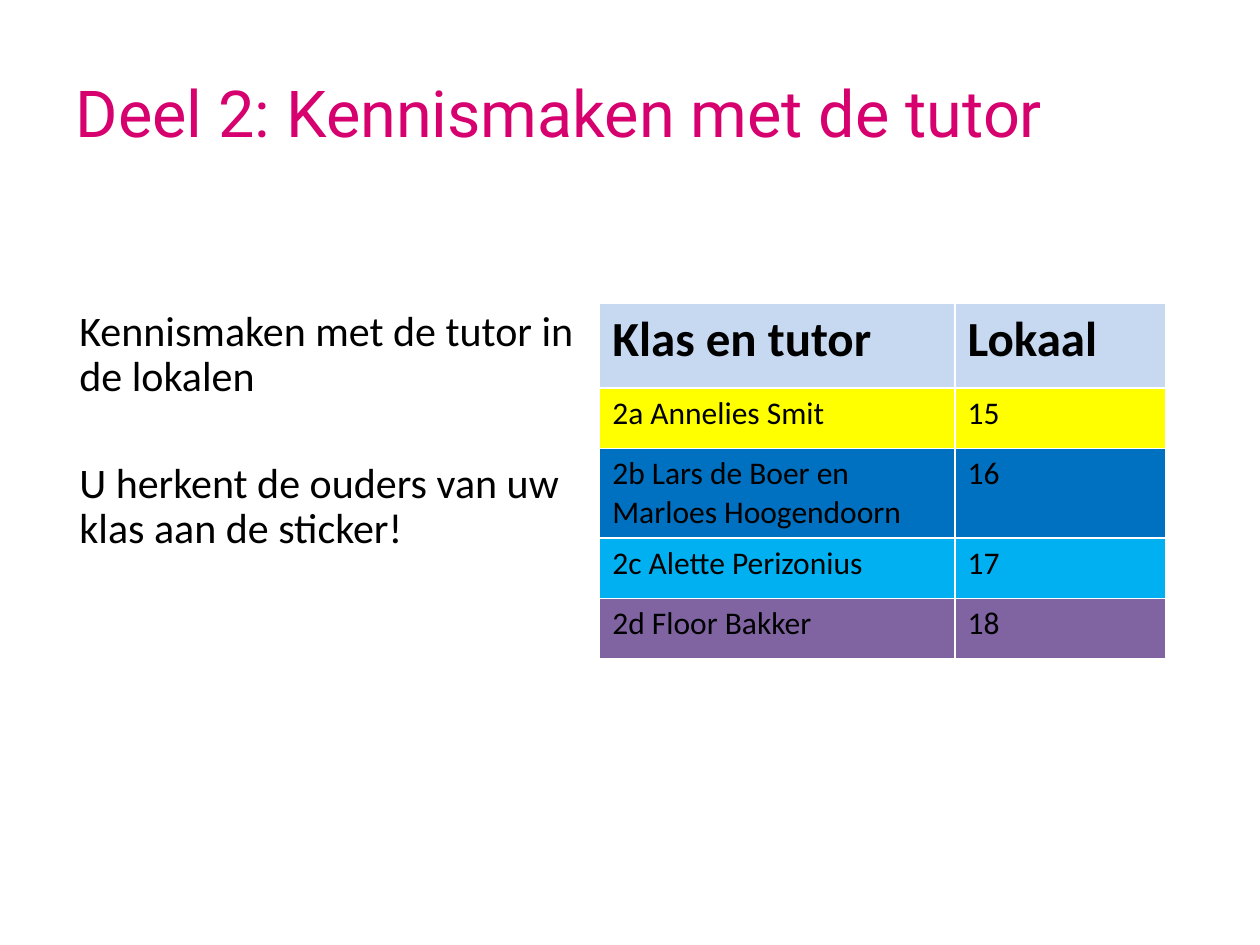
from pptx import Presentation
from pptx.dml.color import RGBColor
from pptx.enum.text import MSO_ANCHOR, MSO_AUTO_SIZE, PP_ALIGN
from pptx.oxml.xmlchemy import OxmlElement
from pptx.util import Inches, Pt

MIDDLE, TOP = MSO_ANCHOR.MIDDLE, MSO_ANCHOR.TOP
NO_AUTOFIT = MSO_AUTO_SIZE.NONE
LEFT = PP_ALIGN.LEFT

HEADER = ("Klas en tutor", "Lokaal")
CLASSES = [
    ("2a Annelies Smit", "15", "FFFF00"),
    ("2b Lars de Boer en Marloes Hoogendoorn", "16", "0070C0"),
    ("2c Alette Perizonius", "17", "00B0F0"),
    ("2d Floor Bakker", "18", "8064A2"),
]
INSTRUCTIONS = [
    "Kennismaken met de tutor in de lokalen",
    "U herkent de ouders van uw klas aan de sticker!",
]
COLUMN_WIDTHS = (2.82, 1.67)
ROW_HEIGHTS = (0.67, 0.48, 0.71, 0.48, 0.48)


def color(value):
    return RGBColor.from_string(value)


def write(paragraph, text, size=18, font="Calibri", ink="000000", bold=False,
          line_spacing=None, space_before=0):
    paragraph.alignment = LEFT
    paragraph.line_spacing = line_spacing
    paragraph.space_before = Pt(space_before)
    run = paragraph.add_run()
    run.text = text
    run.font.size = Pt(size)
    run.font.name = font
    run.font.bold = bold
    run.font.color.rgb = color(ink)


def place(placeholder, left, top, width, height, anchor):
    placeholder.left, placeholder.top = Inches(left), Inches(top)
    placeholder.width, placeholder.height = Inches(width), Inches(height)
    frame = placeholder.text_frame
    frame.word_wrap = True
    frame.auto_size = NO_AUTOFIT
    frame.vertical_anchor = anchor
    return frame


def remove_bullet(paragraph):
    properties = paragraph._p.get_or_add_pPr()
    properties.set("marL", "0")
    properties.set("indent", "0")
    properties.append(OxmlElement("a:buNone"))


def add_title(slide):
    frame = place(slide.shapes.title, 0.5, 0.3, 8.75, 1.25, MIDDLE)
    write(frame.paragraphs[0], "Deel 2: Kennismaken met de tutor", size=37,
          font="Roboto", ink="D6006E", line_spacing=0.9)


def add_instructions(slide):
    frame = place(slide.placeholders[1], 0.53, 2.41, 4.34, 3.57, TOP)
    for index, instruction in enumerate(INSTRUCTIONS):
        paragraph = frame.add_paragraph() if index else frame.paragraphs[0]
        remove_bullet(paragraph)
        write(paragraph, instruction, size=24, line_spacing=0.9,
              space_before=35 if index else 0)


def fill_row(row, texts, fill, **text_format):
    for cell, text in zip(row.cells, texts):
        cell.fill.solid()
        cell.fill.fore_color.rgb = color(fill)
        write(cell.text_frame.paragraphs[0], text, **text_format)


def add_tutor_table(slide):
    table = slide.shapes.add_table(
        len(ROW_HEIGHTS), len(COLUMN_WIDTHS), Inches(4.76), Inches(2.41),
        Inches(sum(COLUMN_WIDTHS)), Inches(sum(ROW_HEIGHTS))).table
    for column, width in zip(table.columns, COLUMN_WIDTHS):
        column.width = Inches(width)
    for row, height in zip(table.rows, ROW_HEIGHTS):
        row.height = Inches(height)
    fill_row(table.rows[0], HEADER, "C6D9F1", size=28, bold=True)
    for index, (tutor, room, fill) in enumerate(CLASSES, start=1):
        fill_row(table.rows[index], (tutor, room), fill)


def main():
    presentation = Presentation()
    presentation.slide_width, presentation.slide_height = Inches(10), Inches(7.5)
    slide = presentation.slides.add_slide(presentation.slide_layouts[1])
    add_title(slide)
    add_instructions(slide)
    add_tutor_table(slide)
    presentation.save("out.pptx")


if __name__ == "__main__":
    main()
